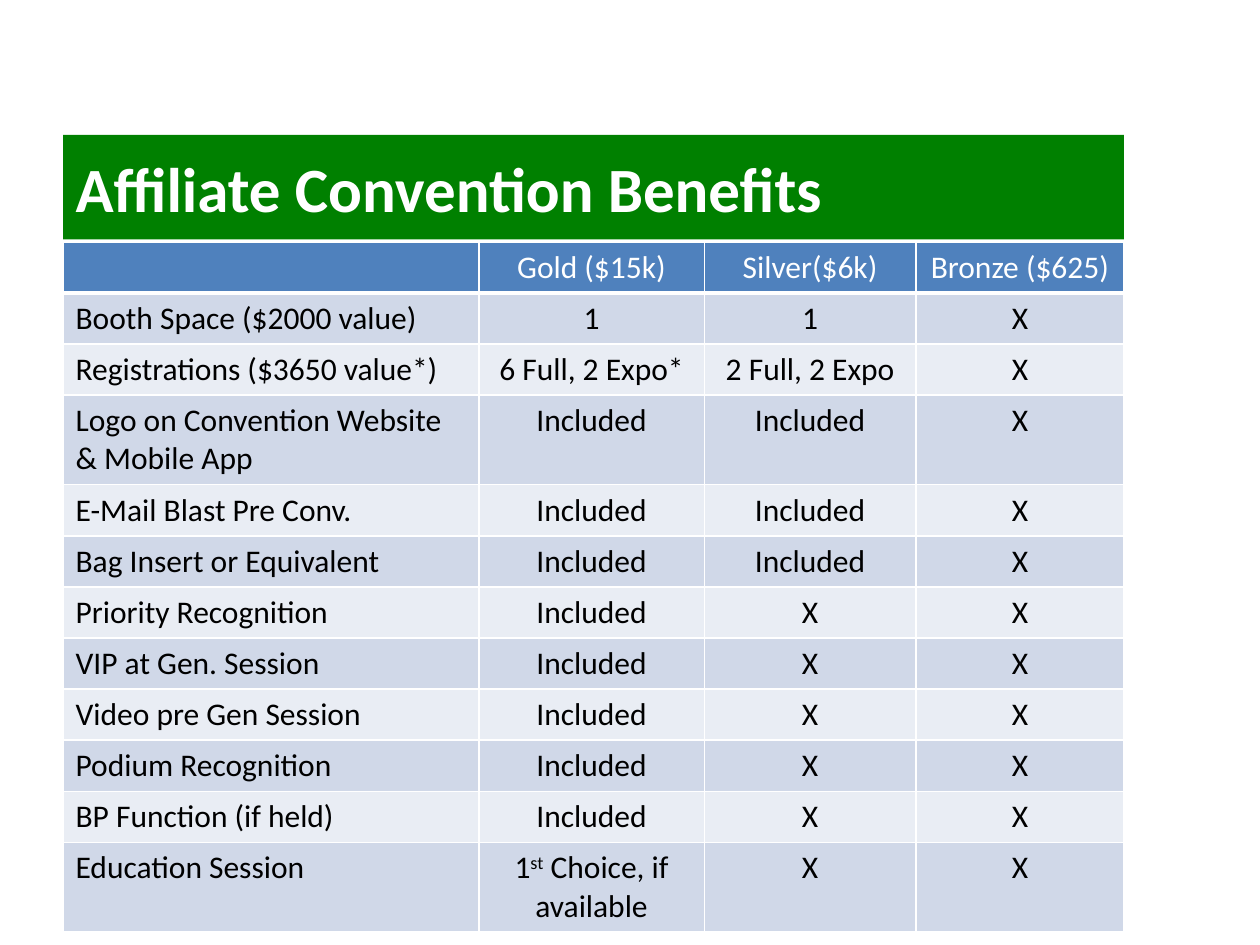
from lxml.etree import SubElement
from pptx import Presentation
from pptx.dml.color import RGBColor
from pptx.enum.text import MSO_ANCHOR, MSO_AUTO_SIZE, PP_ALIGN
from pptx.oxml.ns import qn
from pptx.util import Inches, Pt

FONT = "Calibri"
LEFT, WIDTH = 0.5, 8.42
TITLE_TOP, TITLE_HEIGHT = 1.07, 0.83
TABLE_TOP, ROW_HEIGHT, TALL_ROW_HEIGHT = 1.92, 0.4, 0.7
COLUMN_WIDTHS = [3.3, 1.79, 1.68, 1.65]
HEADER_FILL = "4F81BD"
BAND_FILLS = ["E9EDF4", "D0D8E8"]
SUPERSCRIPT = "st"
TALL_ROWS = {3, 11}

BENEFITS = [
    ["", "Gold ($15k)", "Silver($6k)", "Bronze ($625)"],
    ["Booth Space ($2000 value)", "1", "1", "X"],
    ["Registrations ($3650 value*)", "6 Full, 2 Expo*", "2 Full, 2 Expo", "X"],
    ["Logo on Convention Website & Mobile App", "Included", "Included", "X"],
    ["E-Mail Blast Pre Conv.", "Included", "Included", "X"],
    ["Bag Insert or Equivalent", "Included", "Included", "X"],
    ["Priority Recognition", "Included", "X", "X"],
    ["VIP at Gen. Session", "Included", "X", "X"],
    ["Video pre Gen Session", "Included", "X", "X"],
    ["Podium Recognition", "Included", "X", "X"],
    ["BP Function (if held)", "Included", "X", "X"],
    ["Education Session", ("1", SUPERSCRIPT, " Choice, if available"), "X", "X"],
]


def color(value):
    return RGBColor.from_string(value)


def write_text(frame, text, size=18, fill="000000", bold=False, align=PP_ALIGN.LEFT):
    paragraph = frame.paragraphs[0]
    paragraph.alignment = align
    pieces = (text,) if isinstance(text, str) else text
    for piece in filter(None, pieces):
        run = paragraph.add_run()
        run.text = piece
        run.font.name = FONT
        run.font.size = Pt(size)
        run.font.bold = bold
        run.font.color.rgb = color(fill)
        if piece == SUPERSCRIPT:
            run.font._element.set("baseline", "30000")


def add_border(cell, side, width):
    properties = cell._tc.get_or_add_tcPr()
    line = SubElement(properties, qn(f"a:ln{side}"), w=str(Pt(width)))
    solid = SubElement(line, qn("a:solidFill"))
    SubElement(solid, qn("a:srgbClr"), val="FFFFFF")


def format_cell(cell, text, row, column):
    is_header = row == 0
    for side in "LRTB":
        add_border(cell, side, 3 if is_header and side == "B" else 1)
    cell.fill.solid()
    cell.fill.fore_color.rgb = color(HEADER_FILL if is_header else BAND_FILLS[row % 2])
    write_text(
        cell.text_frame,
        text,
        fill="FFFFFF" if is_header else "000000",
        align=PP_ALIGN.CENTER if column else PP_ALIGN.LEFT,
    )


def format_title(title, text):
    title.left, title.top = Inches(LEFT), Inches(TITLE_TOP)
    title.width, title.height = Inches(WIDTH), Inches(TITLE_HEIGHT)
    title.fill.solid()
    title.fill.fore_color.rgb = color("008000")
    title.line.fill.background()
    frame = title.text_frame
    frame.word_wrap = True
    frame.auto_size = MSO_AUTO_SIZE.NONE
    frame.vertical_anchor = MSO_ANCHOR.MIDDLE
    write_text(frame, text, size=36, fill="FFFFFF", bold=True)


def add_benefits_table(slide):
    heights = [
        TALL_ROW_HEIGHT if row in TALL_ROWS else ROW_HEIGHT
        for row in range(len(BENEFITS))
    ]
    table = slide.shapes.add_table(
        len(BENEFITS), len(COLUMN_WIDTHS),
        Inches(LEFT), Inches(TABLE_TOP), Inches(WIDTH), Inches(sum(heights)),
    ).table
    for column, width in zip(table.columns, COLUMN_WIDTHS):
        column.width = Inches(width)
    for row, (height, texts) in enumerate(zip(heights, BENEFITS)):
        table.rows[row].height = Inches(height)
        for column, text in enumerate(texts):
            format_cell(table.cell(row, column), text, row, column)


def main():
    presentation = Presentation()
    presentation.slide_width = Inches(10)
    presentation.slide_height = Inches(7.5)
    slide = presentation.slides.add_slide(presentation.slide_layouts[5])
    format_title(slide.shapes.title, "Affiliate Convention Benefits")
    add_benefits_table(slide)
    presentation.save("out.pptx")


if __name__ == "__main__":
    main()
